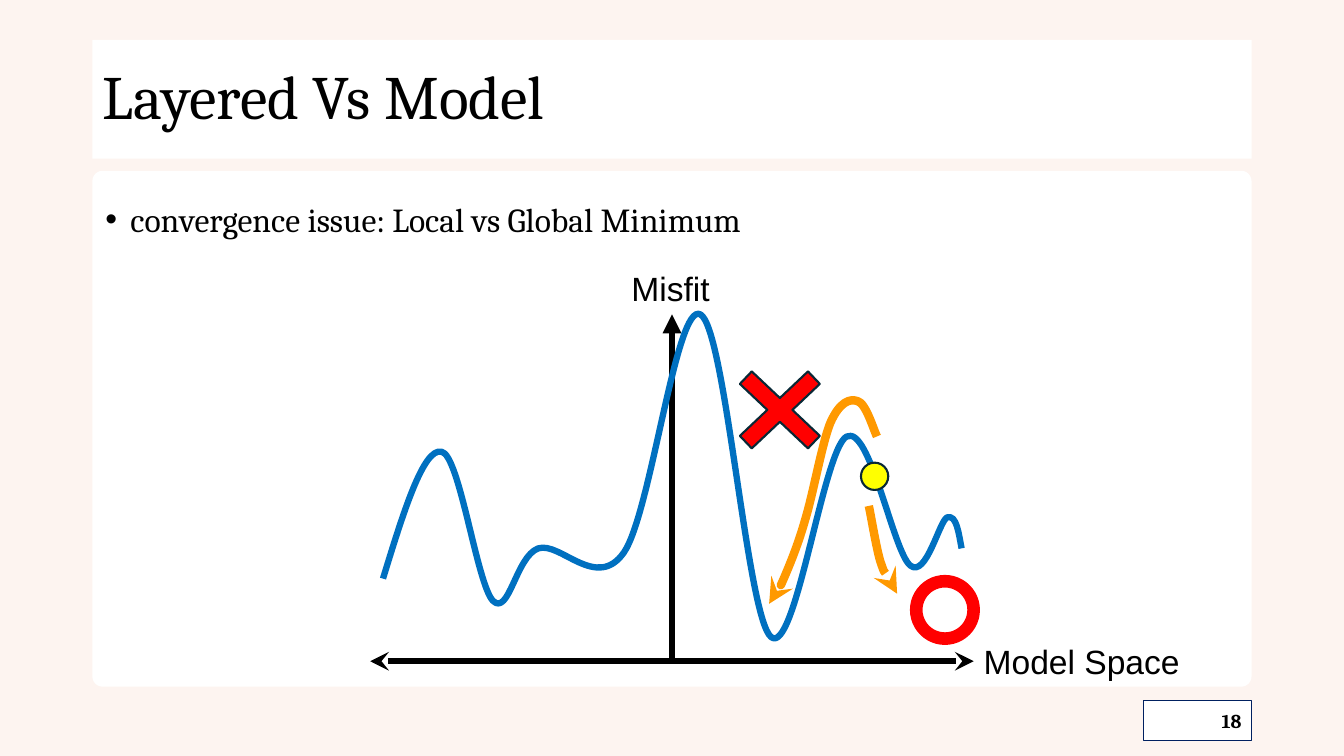
import pptx
import pptx.dml.color
import pptx.enum.shapes
import pptx.enum.text
import pptx.oxml
import pptx.oxml.ns
import pptx.util

Pt = pptx.util.Pt
SHAPE = pptx.enum.shapes.MSO_SHAPE
ALIGN = pptx.enum.text.PP_ALIGN
ANCHOR = pptx.enum.text.MSO_ANCHOR
AUTO_SIZE = pptx.enum.text.MSO_AUTO_SIZE

COLORS = {
    "background": "FDF4F0",
    "panel": "FFFFFF",
    "text": "000000",
    "curve": "0070C0",
    "path": "FF9900",
    "ball": "FFFF00",
    "mark": "FF0000",
    "outline": "082836",
    "number": "002060",
}

# Each curve is a start point followed by triples of Bezier points.
MISFIT_CURVE = [
    (273.6, 413.3),
    (288, 366.5), (302.4, 319.7), (315.4, 322.6),
    (328.3, 324.7), (340.6, 416.9), (352.1, 429.1),
    (363.6, 440.6), (368.6, 397.4), (384.5, 391.7),
    (400.3, 386.6), (426.2, 422.6), (445.7, 394.6),
    (465.1, 366.5), (483.1, 214.6), (500.4, 224.6),
    (518.4, 234.7), (533.5, 440.6), (550.8, 455),
    (568.1, 469.4), (588.2, 320.4), (604.8, 311.8),
    (621.4, 303.1), (637.9, 393.8), (650.2, 403.9),
    (661.7, 413.3), (671, 371.5), (676.8, 369.4),
    (683.3, 367.9), (684.7, 380.2), (686.9, 391.7),
]
LOCAL_PATH = [
    (620.6, 361.4),
    (622.1, 367.9), (625.7, 390.2), (628.6, 400.3),
    (632.2, 411.1), (638.6, 419.8), (640.8, 424.1),
]
GLOBAL_PATH = [
    (626.4, 311.8),
    (624.2, 307.4), (618.5, 288), (612.7, 286.6),
    (607, 284.4), (599.8, 287.3), (593.3, 301.7),
    (587.5, 315.4), (581, 352.1), (575.3, 370.8),
    (570.2, 388.8), (564.5, 402.5), (560.2, 412.6),
    (555.8, 422.6), (551.5, 428.4), (549.4, 431.3),
]


def rgb(name):
    return pptx.dml.color.RGBColor.from_string(COLORS[name])


def add_xml(parent, tag, **attributes):
    element = pptx.oxml.parse_xml(f"<a:{tag} {pptx.oxml.ns.nsdecls('a')}/>")
    for key, value in attributes.items():
        element.set(key, value)
    parent.append(element)
    return element


def write_text(shape, text, size=24, font="Cambria", bold=False, align=ALIGN.LEFT,
               anchor=ANCHOR.TOP, spacing=1.0, auto_size=AUTO_SIZE.NONE):
    frame = shape.text_frame
    frame.word_wrap = True
    frame.auto_size = auto_size
    frame.vertical_anchor = anchor
    para = frame.paragraphs[0]
    para.alignment = align
    para.line_spacing = spacing
    span = para.add_run()
    span.text = text
    span.font.size = Pt(size)
    span.font.name = font
    span.font.bold = bold
    span.font.color.rgb = rgb("text")
    return para


def add_bullet(para, indent=18):
    properties = para._p.get_or_add_pPr()
    properties.set("marL", str(Pt(indent)))
    properties.set("indent", str(-Pt(indent)))
    add_xml(add_xml(properties, "buClr"), "srgbClr", val=COLORS["text"])
    add_xml(properties, "buFont", typeface="Arial")
    add_xml(properties, "buChar", char="•")


def style_line(shape, color, width, head=None, tail=None):
    shape.line.color.rgb = rgb(color)
    shape.line.width = Pt(width)
    for tag, arrow in (("headEnd", head), ("tailEnd", tail)):
        if arrow:
            add_xml(shape.get_or_add_ln(), tag, type=arrow)


def add_box(page, kind, left, top, width, height, fill=None, line=None, line_width=1.5):
    box = page.shapes.add_shape(kind, Pt(left), Pt(top), Pt(width), Pt(height))
    box.shadow.inherit = False
    if fill:
        box.fill.solid()
        box.fill.fore_color.rgb = rgb(fill)
    else:
        box.fill.background()
    if line:
        style_line(box, line, line_width)
    else:
        box.line.fill.background()
    return box


def add_axis(page, start, end, **arrows):
    axis = page.shapes.add_connector(
        pptx.enum.shapes.MSO_CONNECTOR.STRAIGHT, *map(Pt, start + end))
    style_line(axis, "text", 4.5, **arrows)
    add_xml(axis._element.spPr, "effectLst")


def add_curve(page, points, color, width, tail=None):
    """Draw an open freeform and join its vertices, three by three, as Bezier curves."""
    start, *rest = [(Pt(x), Pt(y)) for x, y in points]
    builder = page.shapes.build_freeform(*start)
    builder.add_line_segments(rest, close=False)
    curve = builder.convert_to_shape()
    curve.shadow.inherit = False
    curve.fill.background()
    style_line(curve, color, width, tail=tail)
    segments = curve._element.findall(".//" + pptx.oxml.ns.qn("a:lnTo"))
    outline = segments[0].getparent()
    for index in range(0, len(segments), 3):
        bezier = add_xml(outline, "cubicBezTo")
        for segment in segments[index:index + 3]:
            bezier.append(segment[0])
            outline.remove(segment)


def add_label(page, text, left, top, width):
    label = page.shapes.add_textbox(Pt(left), Pt(top), Pt(width), Pt(36))
    write_text(label, text, font="Arial", auto_size=AUTO_SIZE.SHAPE_TO_FIT_TEXT)


def add_title(page, text):
    title = page.shapes.title
    title.left, title.top, title.width, title.height = map(Pt, (66, 28.4, 828, 85))
    title.fill.solid()
    title.fill.fore_color.rgb = rgb("panel")
    write_text(title, text, size=44, anchor=ANCHOR.MIDDLE, spacing=0.9)


def main():
    deck = pptx.Presentation()
    deck.slide_width, deck.slide_height = Pt(960), Pt(540)
    page = deck.slides.add_slide(deck.slide_layouts[5])
    page.background.fill.solid()
    page.background.fill.fore_color.rgb = rgb("background")

    add_title(page, "Layered Vs Model")
    body = add_box(page, SHAPE.ROUNDED_RECTANGLE, 66, 122, 828, 368.5, fill="panel")
    body.adjustments[0] = 0.02
    add_bullet(write_text(body, "convergence issue: Local vs Global Minimum", spacing=1.5))

    add_axis(page, (264.4, 472.3), (695.5, 472.3), head="stealth", tail="stealth")
    add_axis(page, (480, 473), (480, 224.6), tail="triangle")
    add_curve(page, MISFIT_CURVE, "curve", 4.5)
    add_box(page, SHAPE.OVAL, 615, 330.5, 19.5, 19.5, fill="ball", line="outline")
    cross = add_box(page, SHAPE.MATH_MULTIPLY, 510.3, 248.5, 93.6, 88.6,
                    fill="mark", line="outline")
    cross.adjustments[0] = 0.139
    add_label(page, "Model Space", 695.5, 454.5, 165.6)
    add_label(page, "Misfit", 443.9, 187.5, 72)

    number = add_box(page, SHAPE.RECTANGLE, 817, 500.4, 77, 28.8,
                     fill="panel", line="number", line_width=0.75)
    write_text(number, "18", size=14, bold=True, align=ALIGN.RIGHT, anchor=ANCHOR.MIDDLE)
    add_box(page, SHAPE.OVAL, 654.5, 415.2, 41, 41, line="mark", line_width=9)
    add_curve(page, LOCAL_PATH, "path", 6, tail="stealth")
    add_curve(page, GLOBAL_PATH, "path", 6, tail="stealth")
    deck.save("out.pptx")


if __name__ == "__main__":
    main()
